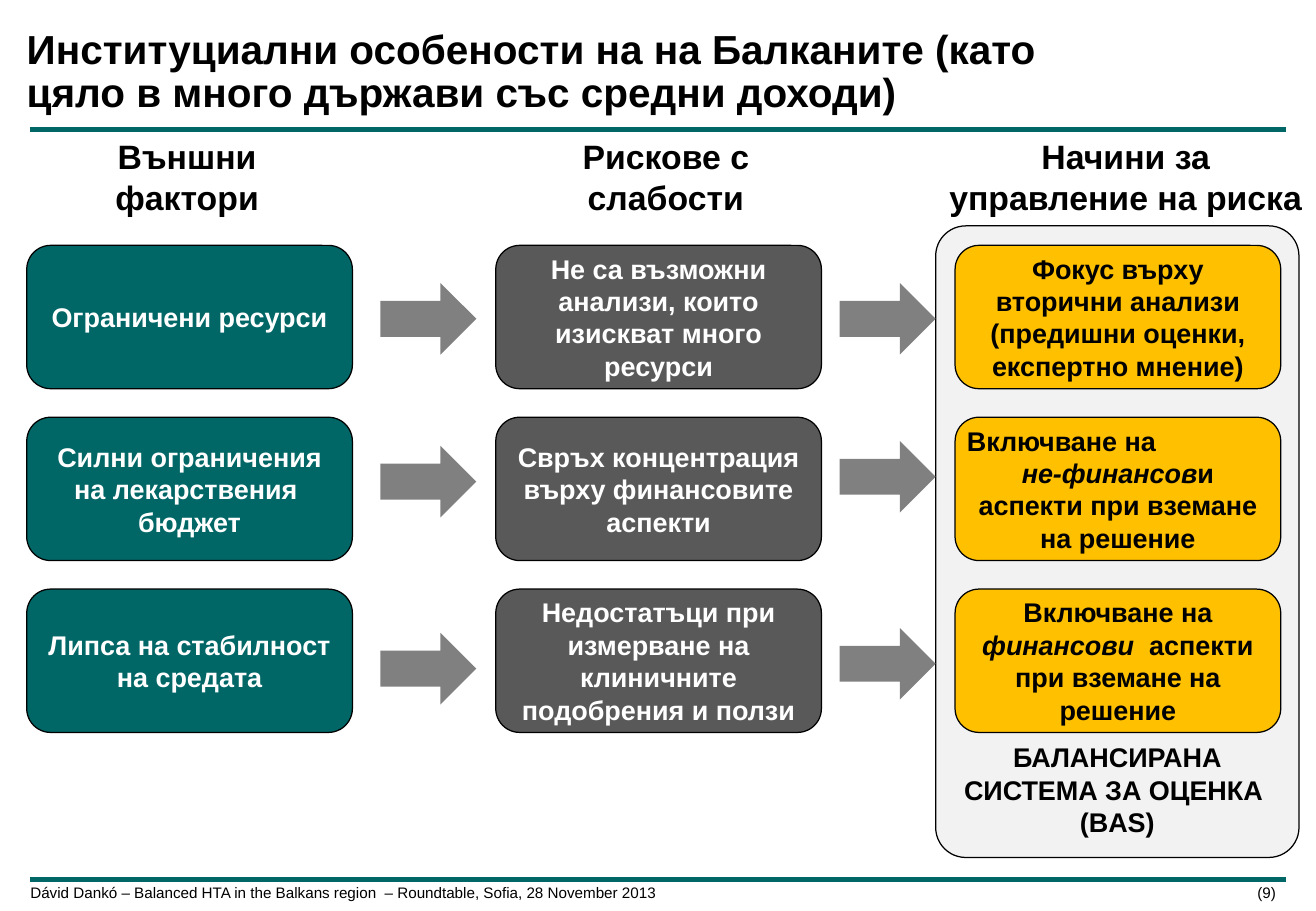
"""Builds the slide on institutional features of the Balkans."""
import pptx
import pptx.util
import pptx.dml.color
import pptx.enum.shapes
import pptx.enum.text
import pptx.oxml.ns
from lxml import etree

Inches = pptx.util.Inches
Pt = pptx.util.Pt
SHAPE = pptx.enum.shapes.MSO_SHAPE
ANCHOR = pptx.enum.text.MSO_ANCHOR
ALIGN = pptx.enum.text.PP_ALIGN
qn = pptx.oxml.ns.qn

COLORS = {"teal": "006666", "dark": "595959", "gold": "FFC000", "panel": "F2F2F2",
          "arrow": "808080", "black": "000000", "white": "FFFFFF"}

TITLE = "Институциални особености на на Балканите (като цяло в много държави със средни доходи)"
FOOTER = "Dávid Dankó – Balanced HTA in the Balkans region  – Roundtable, Sofia, 28 November 2013\t(9)"
SYSTEM = "БАЛАНСИРАНА СИСТЕМА ЗА ОЦЕНКА  (BAS)"

HEADINGS = [
    ("Външни фактори", 0.27, 2.54),
    ("Рискове с слабости", 4.21, 2.54),
    ("Начини за управление на риска", 7.7, 3.13),
]

# Each text is a string or a list of paragraphs; a paragraph is a list of (text, italic) runs.
COLUMNS = [
    (0.22, "teal", "white", [
        "Ограничени ресурси",
        "Силни ограничения на лекарствения  бюджет",
        "Липса на стабилност на средата",
    ]),
    (4.08, "dark", "white", [
        "Не са възможни анализи, които изискват много ресурси",
        "Свръх концентрация върху финансовите аспекти",
        "Недостатъци при измерване на клиничните подобрения и ползи",
    ]),
    (7.86, "gold", "black", [
        "Фокус върху вторични анализи (предишни оценки, експертно мнение)",
        [[("Включване на", False)],
         [("не-финансов", True), ("и аспекти при вземане на решение", False)]],
        [[("Включване на ", False), ("финансови ", True),
          (" аспекти при вземане на решение", False)]],
    ]),
]
ARROWS = [(3.13, [2.33, 3.67, 5.21]), (6.91, [2.33, 3.63, 5.17])]

BOX_W, BOX_H, BOX_TOP, ROW_STEP = 2.68, 1.18, 2.02, 1.415
ARROW_W, ARROW_H = 0.79, 0.59
RULE_LEFT, RULE_RIGHT, RULES = 0.25, 10.58, [1.07, 7.24]


def rgb(name):
    return pptx.dml.color.RGBColor.from_string(COLORS[name])


def write(sp, text, size=16, color="black", bold=True, align=ALIGN.CENTER, anchor=ANCHOR.TOP,
          insets=(0.1, 0.05), spacing=None, tab=None, first_align=None):
    tf = sp.text_frame
    tf.word_wrap = True
    tf.vertical_anchor = anchor
    tf.margin_left = tf.margin_right = Inches(insets[0])
    tf.margin_top = tf.margin_bottom = Inches(insets[1])
    paragraphs = [[(text, False)]] if isinstance(text, str) else text
    for i, runs in enumerate(paragraphs):
        p = tf.add_paragraph() if i else tf.paragraphs[0]
        p.alignment = first_align if first_align and i == 0 else align
        if spacing:
            p.line_spacing = spacing
        if tab:
            tabs = etree.SubElement(p._p.get_or_add_pPr(), qn("a:tabLst"))
            etree.SubElement(tabs, qn("a:tab"), pos=str(Inches(tab)), algn="r")
        for content, italic in runs:
            r = p.add_run()
            r.text = content
            r.font.name, r.font.size = "Arial", Pt(size)
            r.font.bold, r.font.italic = bold, italic
            r.font.color.rgb = rgb(color)


def add_text(s, box, text, **style):
    write(s.shapes.add_textbox(*map(Inches, box)), text, **style)


def add_block(s, kind, box, fill, outlined=True):
    sp = s.shapes.add_shape(kind, *map(Inches, box))
    sp.shadow.inherit = False
    sp.fill.solid()
    sp.fill.fore_color.rgb = rgb(fill)
    if outlined:
        sp.line.color.rgb = rgb("black")
        sp.line.width = Pt(0.75)
    else:
        sp.line.fill.background()
    return sp


def add_rule(s, y):
    line = s.shapes.add_connector(pptx.enum.shapes.MSO_CONNECTOR.STRAIGHT, Inches(RULE_LEFT),
                                  Inches(y), Inches(RULE_RIGHT), Inches(y))
    line.line.color.rgb = rgb("teal")
    line.line.width = Pt(3)
    etree.SubElement(line._element.spPr, qn("a:effectLst"))


def main():
    prs = pptx.Presentation()
    prs.slide_width, prs.slide_height = Inches(10.83), Inches(7.5)
    s = prs.slides.add_slide(prs.slide_layouts[6])

    add_text(s, (0.25, 7.29, 10.36, 0.14), FOOTER, size=9, bold=False, align=ALIGN.LEFT,
             insets=(0, 0), spacing=0.9, tab=10.25)
    for y in RULES:
        add_rule(s, y)
    add_text(s, (0.22, 0.08, 8.58, 0.92), TITLE, size=24, align=ALIGN.LEFT,
             anchor=ANCHOR.BOTTOM, insets=(0, 0.04), spacing=0.9)
    for text, left, width in HEADINGS:
        add_text(s, (left, 1.07, width, 0.77), text, size=20)

    panel = add_block(s, SHAPE.ROUNDED_RECTANGLE, (7.7, 1.86, 2.99, 5.2), "panel")
    panel.adjustments[0] = 0.083
    add_text(s, (7.7, 6.05, 2.99, 0.91), SYSTEM)

    for left, fill, color, texts in COLUMNS:
        for row, text in enumerate(texts):
            box = (left, BOX_TOP + row * ROW_STEP, BOX_W, BOX_H)
            sp = add_block(s, SHAPE.ROUNDED_RECTANGLE, box, fill)
            split = not isinstance(text, str) and len(text) > 1
            write(sp, text, color=color, anchor=ANCHOR.MIDDLE, insets=(0.04, 0.2),
                  first_align=ALIGN.LEFT if split else None)
    for left, tops in ARROWS:
        for top in tops:
            add_block(s, SHAPE.RIGHT_ARROW, (left, top, ARROW_W, ARROW_H), "arrow", outlined=False)

    prs.save("out.pptx")


if __name__ == "__main__":
    main()
